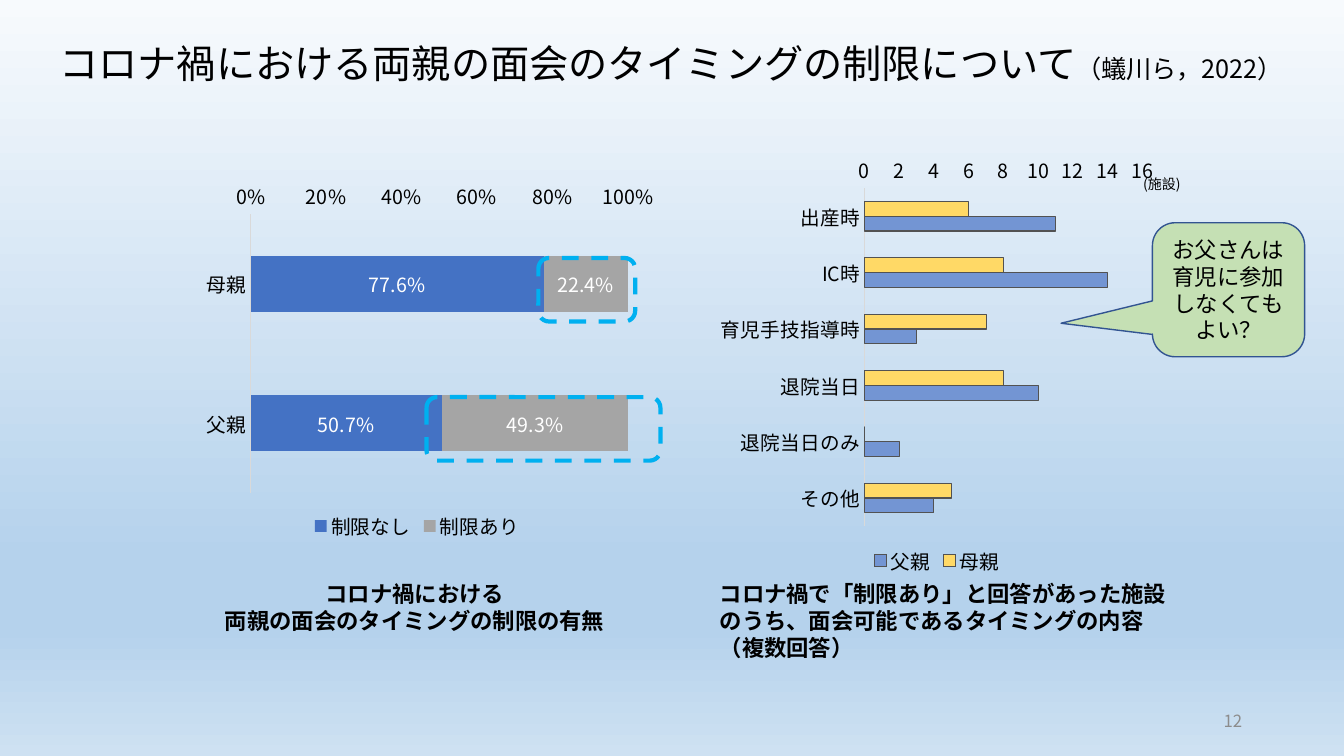
from lxml import etree
from pptx import Presentation
from pptx.chart.data import CategoryChartData
from pptx.dml.color import RGBColor
from pptx.enum.chart import XL_CHART_TYPE, XL_LABEL_POSITION, XL_LEGEND_POSITION, XL_TICK_MARK
from pptx.enum.dml import MSO_LINE
from pptx.enum.shapes import MSO_SHAPE
from pptx.enum.text import MSO_ANCHOR, MSO_AUTO_SIZE, PP_ALIGN
from pptx.oxml.ns import qn
from pptx.util import Inches, Pt

LEFT, CENTER, RIGHT = PP_ALIGN.LEFT, PP_ALIGN.CENTER, PP_ALIGN.RIGHT
TOP, MIDDLE = MSO_ANCHOR.TOP, MSO_ANCHOR.MIDDLE
FIXED_SIZE = MSO_AUTO_SIZE.NONE
CLUSTERED, STACKED = XL_CHART_TYPE.BAR_CLUSTERED, XL_CHART_TYPE.BAR_STACKED
LEGEND_BOTTOM, LABEL_CENTER = XL_LEGEND_POSITION.BOTTOM, XL_LABEL_POSITION.CENTER
ROUNDED, CALLOUT = MSO_SHAPE.ROUNDED_RECTANGLE, MSO_SHAPE.ROUNDED_RECTANGULAR_CALLOUT
NO_TICK, DASH = XL_TICK_MARK.NONE, MSO_LINE.DASH
TITLE_ONLY = 5
FONT = "Noto Sans CJK JP"
BLACK, WHITE, GRAY = "000000", "FFFFFF", "8C8C8C"
AXIS_GRAY, BAR_EDGE, HIGHLIGHT = "D9D9D9", "525252", "00B0F0"


def color(value):
    return RGBColor.from_string(value)


def child(parent, tag, **attributes):
    return etree.SubElement(parent, qn(tag), **attributes)


class SlideBuilder:
    def __init__(self, page):
        self.page = page

    def style_font(self, font, size, ink=BLACK, bold=False):
        font.name = FONT
        font.size = Pt(size)
        font.bold = bold
        font.color.rgb = color(ink)

    def background(self, stops, angle):
        fill = self.page.background.fill
        fill.gradient()
        gradient = next(self.page.element.iter(qn("a:gradFill")))
        for piece in list(gradient):
            gradient.remove(piece)
        stop_list = child(gradient, "a:gsLst")
        for percent, value in stops:
            stop = child(stop_list, "a:gs", pos=str(percent * 1000))
            child(stop, "a:srgbClr", val=value)
        child(gradient, "a:lin", ang=str(angle * 60000), scaled="0")

    def fill_text(self, frame, paragraphs, align=LEFT, anchor=TOP, spacing=None, ink=BLACK, bold=False):
        frame.word_wrap = True
        frame.auto_size = FIXED_SIZE
        frame.vertical_anchor = anchor
        for index, runs in enumerate(paragraphs):
            para = frame.add_paragraph() if index else frame.paragraphs[0]
            para.alignment = align
            para.line_spacing = spacing
            for words, size in runs:
                span = para.add_run()
                span.text = words
                self.style_font(span.font, size, ink, bold)

    def title(self, place, runs):
        box = self.page.shapes.title
        box.left, box.top, box.width, box.height = map(Inches, place)
        self.fill_text(box.text_frame, [runs], anchor=MIDDLE, spacing=0.9)

    def text(self, place, paragraphs, **style):
        box = self.page.shapes.add_textbox(*map(Inches, place))
        self.fill_text(box.text_frame, paragraphs, **style)

    def shape(self, kind, place, line, width, fill=None, dash=None, adjustments=()):
        shape = self.page.shapes.add_shape(kind, *map(Inches, place))
        shape.shadow.inherit = False
        if fill:
            shape.fill.solid()
            shape.fill.fore_color.rgb = color(fill)
        else:
            shape.fill.background()
        shape.line.color.rgb = color(line)
        shape.line.width = Pt(width)
        if dash:
            shape.line.dash_style = dash
        for index, value in enumerate(adjustments):
            shape.adjustments[index] = value
        return shape

    def bar_chart(self, kind, place, categories, series, gap, overlap, top, step,
                  number_format="General", edge=None, label_format=None, layout=None):
        data = CategoryChartData()
        data.categories = categories
        for name, values, _ in series:
            data.add_series(name, values)
        chart = self.page.shapes.add_chart(kind, *map(Inches, place), data).chart
        self.style_font(chart.font, 14)
        chart.has_title = False
        chart.has_legend = True
        chart.legend.position = LEGEND_BOTTOM
        chart.legend.include_in_layout = False
        self.style_font(chart.legend.font, 14)

        names, scale = chart.category_axis, chart.value_axis
        for axis in (names, scale):
            axis.has_major_gridlines = False
            axis.major_tick_mark = axis.minor_tick_mark = NO_TICK
            self.style_font(axis.tick_labels.font, 14)
        names.reverse_order = True
        names.format.line.color.rgb = color(AXIS_GRAY)
        names.format.line.width = Pt(0.75)
        scale.format.line.fill.background()
        scale.minimum_scale, scale.maximum_scale, scale.major_unit = 0, top, step
        scale.tick_labels.number_format = number_format
        scale.tick_labels.number_format_is_linked = False

        plot = chart.plots[0]
        plot.gap_width, plot.overlap, plot.vary_by_categories = gap, overlap, False
        for bars, (_, _, value) in zip(plot.series, series):
            bars.format.fill.solid()
            bars.format.fill.fore_color.rgb = color(value)
            if edge:
                bars.format.line.color.rgb = color(edge)
                bars.format.line.width = Pt(0.75)
            if label_format:
                labels = bars.data_labels
                labels.show_value = True
                labels.position = LABEL_CENTER
                labels.number_format = label_format
                labels.number_format_is_linked = False
                self.style_font(labels.font, 14, WHITE)
        if layout:
            self.place_plot(chart, layout)
        self.match_east_asian(chart.element)

    def place_plot(self, chart, layout):
        area = next(chart.element.iter(qn("c:plotArea")))
        for old in area.findall(qn("c:layout")):
            area.remove(old)
        frame = etree.Element(qn("c:layout"))
        area.insert(0, frame)
        manual = child(frame, "c:manualLayout")
        child(manual, "c:layoutTarget", val="inner")
        child(manual, "c:xMode", val="edge")
        child(manual, "c:yMode", val="edge")
        for tag, value in zip("xywh", layout):
            child(manual, "c:" + tag, val=str(value))

    def match_east_asian(self, root):
        for latin in list(root.iter(qn("a:latin"))):
            latin.addnext(etree.Element(qn("a:ea"), typeface=FONT))


def main():
    deck = Presentation()
    deck.slide_width, deck.slide_height = Inches(13.33), Inches(7.5)
    builder = SlideBuilder(deck.slides.add_slide(deck.slide_layouts[TITLE_ONLY]))
    builder.background([(0, "F7FAFD"), (74, "B5D2EC"), (83, "B5D2EC"), (100, "CEE1F2")], 90)
    builder.title((0.49, 0.44, 12.45, 0.43), [
        ("コロナ禍における両親の面会のタイミングの制限について", 28), ("（蟻川ら，2022）", 18)])
    builder.text((9.42, 6.95, 3, 0.4), [[("12", 12)]], align=RIGHT, anchor=MIDDLE, ink=GRAY)

    builder.text((1.68, 5.71, 4.87, 0.64), [
        [("コロナ禍における", 16)],
        [("両親の面会のタイミングの制限の有無", 16)]], align=CENTER, bold=True)
    builder.bar_chart(
        CLUSTERED, (7.06, 1.46, 4.47, 4.28),
        ["出産時", "IC時", "育児手技指導時", "退院当日", "退院当日のみ", "その他"],
        [("母親", (6, 8, 7, 8, 0, 5), "FFD966"), ("父親", (11, 14, 3, 10, 2, 4), "7395D3")],
        gap=182, overlap=0, top=16, step=2, edge=BAR_EDGE)
    builder.text((7.04, 5.71, 4.66, 0.91), [
        [("コロナ禍で「制限あり」と回答があった施設のうち、面会可能であるタイミングの内容", 16)],
        [("（複数回答）", 16)]], bold=True)
    builder.bar_chart(
        STACKED, (1.71, 1.5, 4.86, 3.9), ["母親", "父親"],
        [("制限なし", (0.776, 0.507), "4472C4"), ("制限あり", (0.224, 0.493), "A5A5A5")],
        gap=150, overlap=100, top=1, step=0.2, number_format="0%", label_format="0.0%",
        layout=(0.16, 0.16, 0.77, 0.71))

    for place in ((5.34, 2.56, 0.96, 0.63), (4.23, 3.94, 2.32, 0.63)):
        builder.shape(ROUNDED, place, HIGHLIGHT, 3, dash=DASH)
    builder.text((11.24, 1.69, 0.66, 0.27), [[("(施設)", 10)]])
    callout = builder.shape(CALLOUT, (11.43, 2.21, 1.51, 1.33), "325491", 1, fill="C5E0B4",
                            adjustments=(-1.1, 0.25, 0.17))
    builder.fill_text(callout.text_frame, [[("お父さんは育児に参加しなくてもよい？", 16)]],
                      align=CENTER, anchor=MIDDLE)
    builder.match_east_asian(builder.page.element)
    deck.save("out.pptx")


if __name__ == "__main__":
    main()
